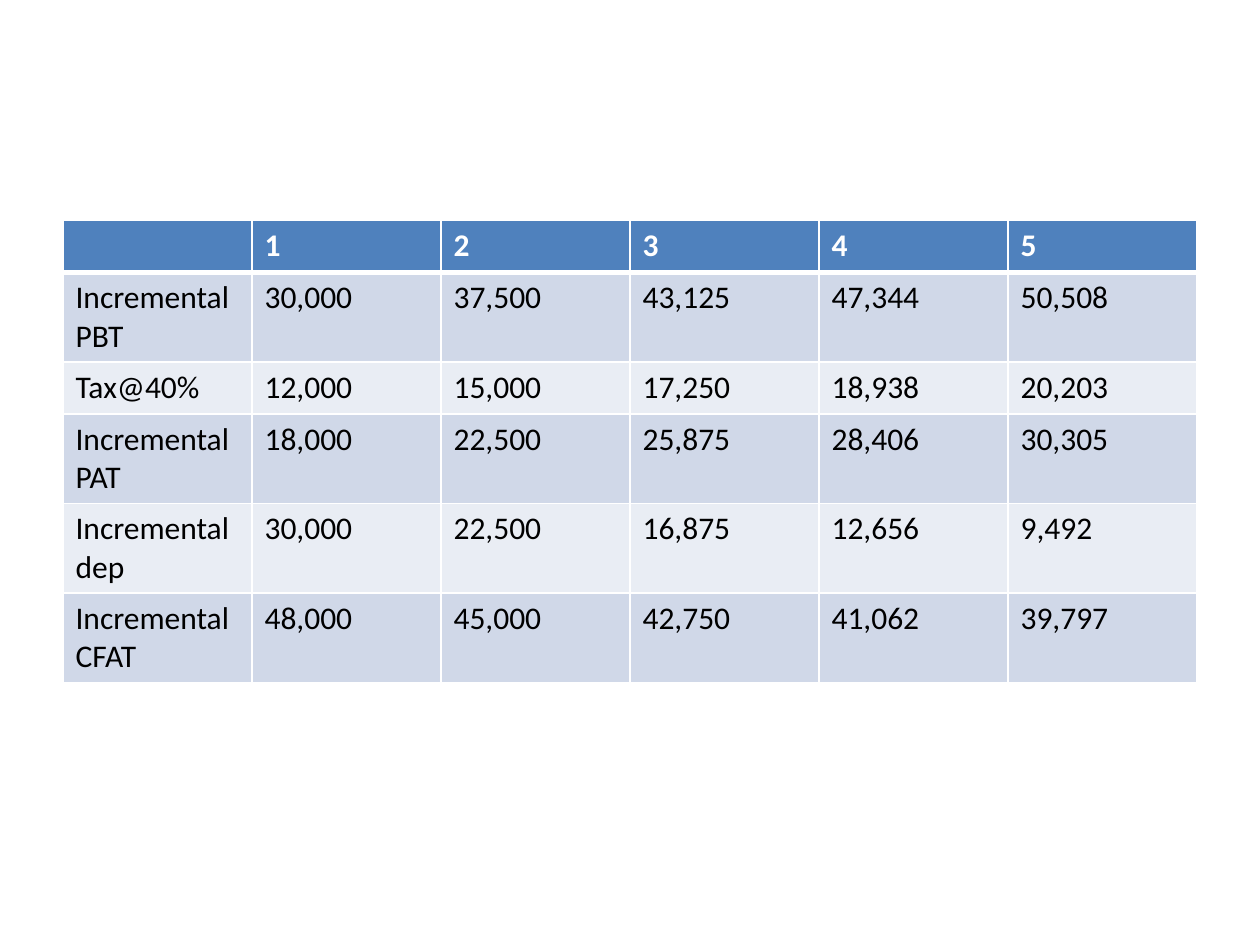
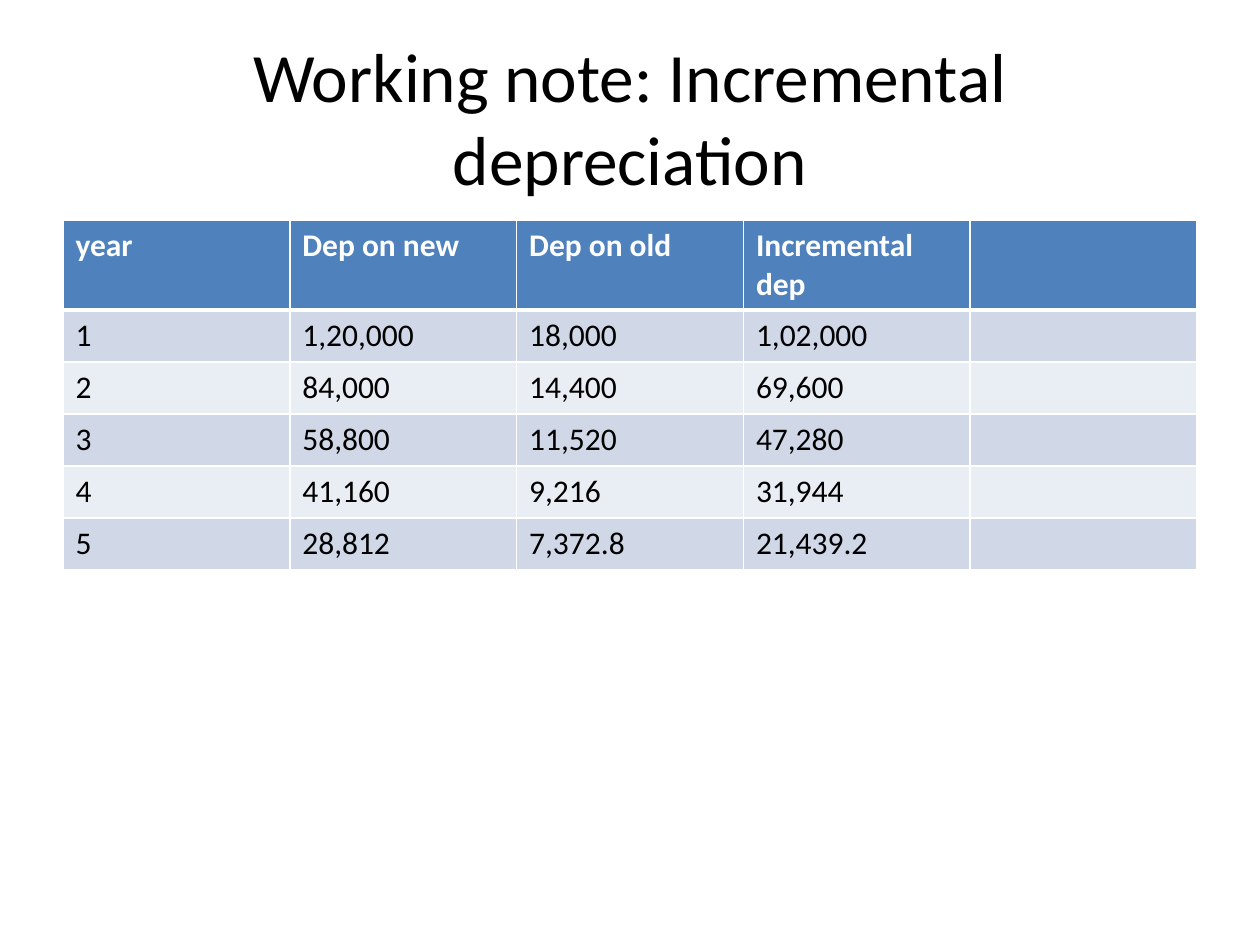
from lxml.etree import SubElement
from pptx import Presentation
from pptx.dml.color import RGBColor
from pptx.enum.text import MSO_ANCHOR, PP_ALIGN
from pptx.oxml.ns import qn
from pptx.util import Inches, Pt

FONT = "Calibri"
WHITE, BLACK = "FFFFFF", "000000"
HEADER, BANDS = "4F81BD", ("D0D8E8", "E9EDF4")
TITLE_ONLY, BLANK = 5, 6

# Slide and content boxes: left, top, width, height as shares of the slide
SLIDE_W, SLIDE_H = Inches(10), Inches(7.5)
TITLE_BOX = (0.05, 0.04, 0.9, 1 / 6)
TABLE_BOX = (0.05, 7 / 30, 0.9, 0.33)

CASH_FLOWS = [
    ["", "1", "2", "3", "4", "5"],
    ["Incremental PBT", "30,000", "37,500", "43,125", "47,344", "50,508"],
    ["Tax@40%", "12,000", "15,000", "17,250", "18,938", "20,203"],
    ["Incremental PAT", "18,000", "22,500", "25,875", "28,406", "30,305"],
    ["Incremental dep", "30,000", "22,500", "16,875", "12,656", "9,492"],
    ["Incremental CFAT", "48,000", "45,000", "42,750", "41,062", "39,797"],
]
DEPRECIATION = [
    ["year", "Dep on new", "Dep on old", "Incremental dep", ""],
    ["1", "1,20,000", "18,000", "1,02,000", ""],
    ["2", "84,000", "14,400", "69,600", ""],
    ["3", "58,800", "11,520", "47,280", ""],
    ["4", "41,160", "9,216", "31,944", ""],
    ["5", "28,812", "7,372.8", "21,439.2", ""],
]


def color(value):
    return RGBColor.from_string(value)


def to_emu(box):
    return [int(share * size) for share, size in zip(box, (SLIDE_W, SLIDE_H) * 2)]


def add_run(p, text, size, ink, bold=False):
    r = p.add_run()
    r.text = text
    r.font.name, r.font.size, r.font.bold = FONT, Pt(size), bold
    r.font.color.rgb = color(ink)


def set_borders(cell, widths):
    tc_pr = cell._tc.get_or_add_tcPr()
    for side, width in widths.items():
        ln = SubElement(tc_pr, qn(f"a:ln{side}"), w=str(Pt(width)))
        SubElement(SubElement(ln, qn("a:solidFill")), qn("a:srgbClr"), val=WHITE)


def add_title(slide, box, text):
    sp = slide.shapes.title
    sp.left, sp.top, sp.width, sp.height = to_emu(box)
    tf = sp.text_frame
    tf.word_wrap = True
    tf.vertical_anchor = MSO_ANCHOR.MIDDLE
    p = tf.paragraphs[0]
    p.alignment = PP_ALIGN.CENTER
    add_run(p, text, 39.6, BLACK)


def add_banded_table(slide, box, rows):
    table = slide.shapes.add_table(len(rows), len(rows[0]), *to_emu(box)).table
    for i, row in enumerate(rows):
        is_header = i == 0
        # The rule under the header is heavier than the other lines
        widths = {"L": 1, "R": 1, "T": 3 if i == 1 else 1, "B": 3 if is_header else 1}
        for j, text in enumerate(row):
            cell = table.cell(i, j)
            set_borders(cell, widths)
            cell.fill.solid()
            cell.fill.fore_color.rgb = color(HEADER if is_header else BANDS[(i - 1) % 2])
            if text:
                p = cell.text_frame.paragraphs[0]
                add_run(p, text, 18, WHITE if is_header else BLACK, is_header)


def add_table_slide(prs, rows, title=None):
    slide = prs.slides.add_slide(prs.slide_layouts[TITLE_ONLY if title else BLANK])
    slide.background.fill.solid()
    slide.background.fill.fore_color.rgb = color(WHITE)
    if title:
        add_title(slide, TITLE_BOX, title)
    add_banded_table(slide, TABLE_BOX, rows)


def main():
    prs = Presentation()
    prs.slide_width, prs.slide_height = SLIDE_W, SLIDE_H
    add_table_slide(prs, CASH_FLOWS)
    add_table_slide(prs, DEPRECIATION, "Working note: Incremental depreciation")
    prs.save("out.pptx")


if __name__ == "__main__":
    main()
